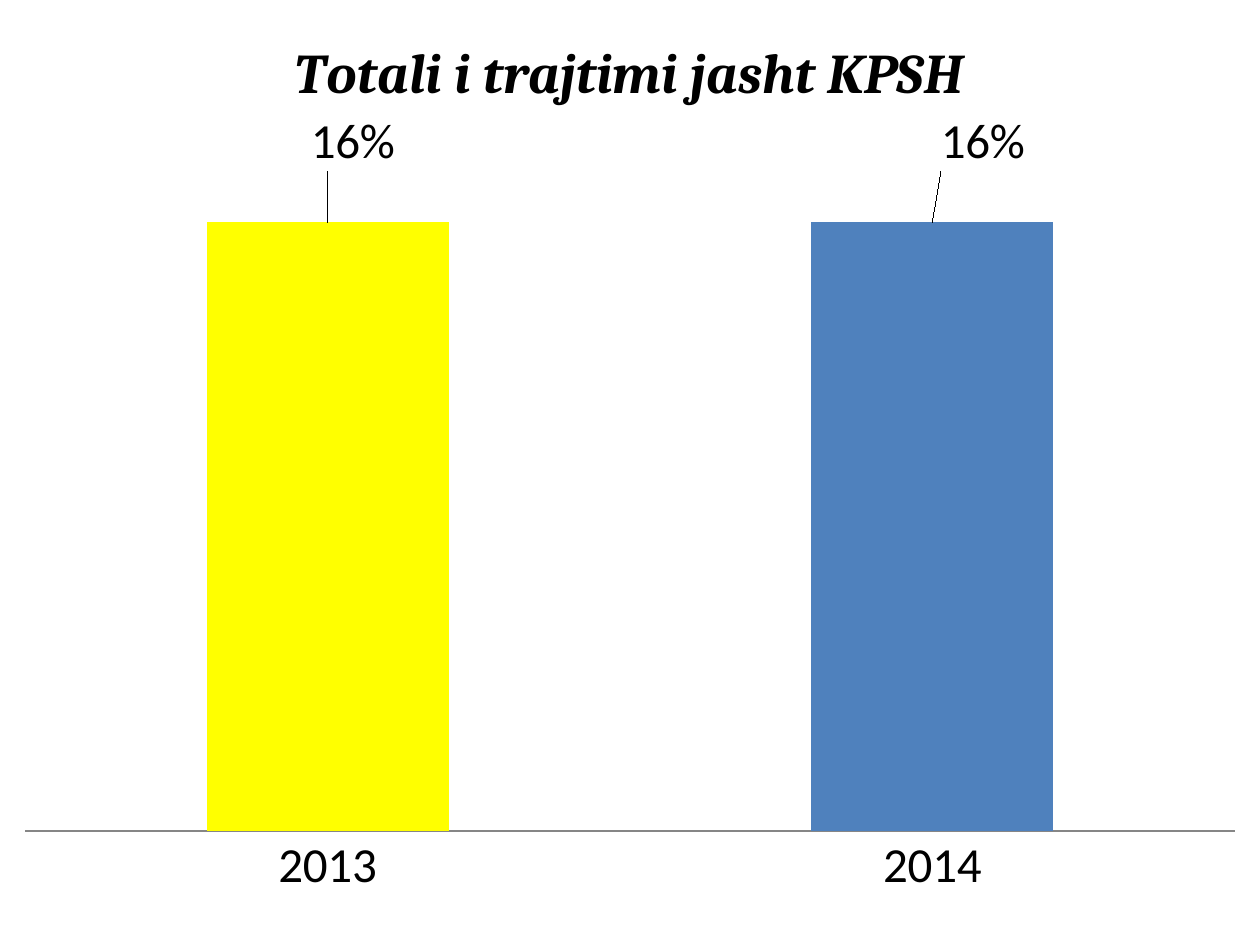
from lxml.etree import SubElement
from pptx import Presentation
from pptx.chart.data import CategoryChartData
from pptx.dml.color import RGBColor
from pptx.enum.chart import XL_CHART_TYPE as ChartType
from pptx.enum.chart import XL_LABEL_POSITION as LabelPosition
from pptx.enum.chart import XL_TICK_MARK as TickMark
from pptx.oxml.ns import qn
from pptx.util import Inches, Pt

TITLE = "Totali i trajtimi jasht KPSH"
PERCENT = '0"%"'
BAR_COLORS = ["FFFF00", "4F81BD"]
LABEL_SHIFTS = [(0.02, -0.05), (0.04, -0.05)]


def paint(target, color):
    """Give a fill holder one solid colour."""
    target.fill.solid()
    target.fill.fore_color.rgb = RGBColor.from_string(color)


def style_font(font, size, name="Calibri", bold=False, italic=False):
    """Set a black font of the given size and face."""
    font.size, font.name = Pt(size), name
    font.bold, font.italic = bold, italic
    font.color.rgb = RGBColor.from_string("000000")


def set_layout(parent, position, **settings):
    """Insert a manual chart layout at a child position."""
    layout = parent.find(qn("c:layout"))
    if layout is not None:
        parent.remove(layout)
    layout = SubElement(parent, qn("c:layout"))
    parent.insert(position, layout)
    manual = SubElement(layout, qn("c:manualLayout"))
    for tag, value in settings.items():
        SubElement(manual, qn(f"c:{tag}")).set("val", str(value))


def add_treatment_chart(slide):
    """Add the yearly column chart and return it."""
    yearly = CategoryChartData(number_format=PERCENT)
    yearly.categories = ["2013", "2014"]
    yearly.add_series(TITLE, [16, 16])
    chart = slide.shapes.add_chart(
        ChartType.COLUMN_CLUSTERED, 0, 0, Inches(10), Inches(7.25), yearly
    ).chart
    style_font(chart.font, 10)
    chart.has_legend = False
    chart.has_title = True
    heading = chart.chart_title.text_frame
    heading.text = TITLE
    style_font(heading.paragraphs[0].font, 32, "Cambria", True, True)
    chart.chart_title.include_in_layout = False
    set_layout(chart.plots[0]._element.getparent(), 0, layoutTarget="inner",
               xMode="edge", yMode="edge", x=0.02, y=0.16, w=0.96, h=0.75)
    return chart


def style_axes(chart):
    """Show only the year axis, without ticks or gridlines."""
    years, shares = chart.category_axis, chart.value_axis
    years.major_tick_mark = years.minor_tick_mark = TickMark.NONE
    years.format.line.color.rgb = RGBColor.from_string("868686")
    style_font(years.tick_labels.font, 28)
    shares.minimum_scale, shares.maximum_scale = 0, 18
    shares.has_major_gridlines = False
    shares.visible = False


def style_bars(chart):
    """Colour each bar and place its percentage above it."""
    plot = chart.plots[0]
    plot.gap_width = 150
    plot.vary_by_categories = False
    bars = plot.series[0]
    paint(bars.format, BAR_COLORS[-1])
    labels = bars.data_labels
    labels.show_value = True
    labels.number_format = PERCENT
    labels.number_format_is_linked = False
    style_font(labels.font, 28)
    for index, (color, (dx, dy)) in enumerate(zip(BAR_COLORS, LABEL_SHIFTS)):
        bar = bars.points[index]
        paint(bar.format, color)
        style_font(bar.data_label.font, 28)
        bar.data_label.position = LabelPosition.OUTSIDE_END
        label = labels._element.findall(qn("c:dLbl"))[index]
        set_layout(label, 1, x=dx, y=dy)


def main():
    """Build and save the slide."""
    deck = Presentation()
    deck.slide_width, deck.slide_height = Inches(10), Inches(7.5)
    slide = deck.slides.add_slide(deck.slide_layouts[6])
    chart = add_treatment_chart(slide)
    style_axes(chart)
    style_bars(chart)
    deck.save("out.pptx")


if __name__ == "__main__":
    main()
